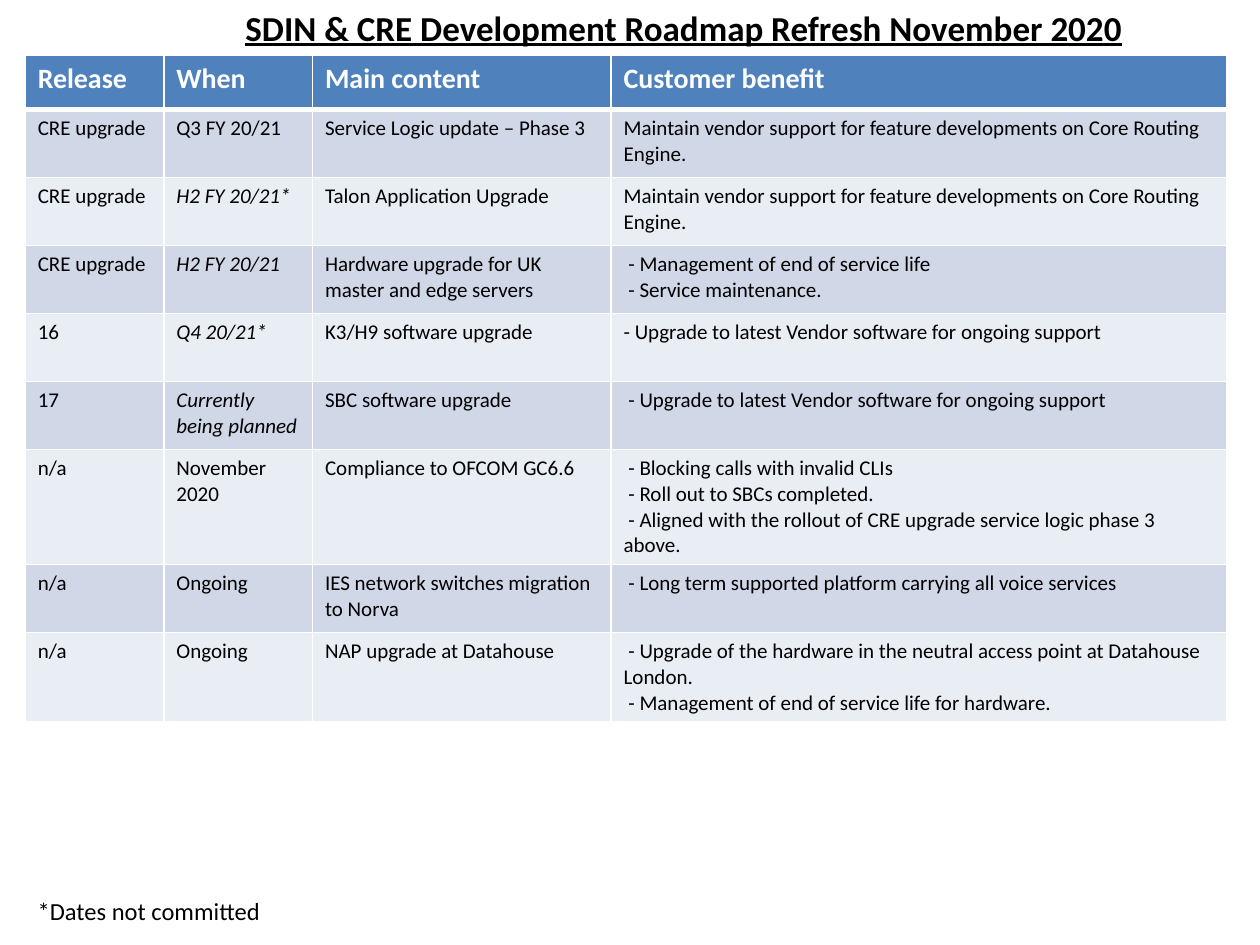
from dataclasses import dataclass
from lxml.etree import SubElement
from pptx import Presentation
from pptx.dml.color import RGBColor
from pptx.enum.text import MSO_AUTO_SIZE
from pptx.oxml.ns import qn
from pptx.util import Inches, Pt

TITLE = "SDIN & CRE Development Roadmap Refresh November 2020"
NOTE = "*Dates not committed"
HEADS = ("Release", "When", "Main content", "Customer benefit")
ROUTING = "Maintain vendor support for feature developments on Core Routing Engine."
LATEST = "- Upgrade to latest Vendor software for ongoing support"
ROWS = [
    ("CRE upgrade", "Q3 FY 20/21", "Service Logic update – Phase 3", ROUTING),
    ("CRE upgrade", "H2 FY 20/21*", "Talon Application Upgrade", ROUTING),
    ("CRE upgrade", "H2 FY 20/21", "Hardware upgrade for UK master and edge servers",
     " - Management of end of service life\n - Service maintenance."),
    ("16", "Q4 20/21*", "K3/H9 software upgrade", LATEST),
    ("17", "Currently being planned", "SBC software upgrade", " " + LATEST),
    ("n/a", "November 2020", "Compliance to OFCOM GC6.6",
     " - Blocking calls with invalid CLIs\n - Roll out to SBCs completed.\n"
     " - Aligned with the rollout of CRE upgrade service logic phase 3 above."),
    ("n/a", "Ongoing", "IES network switches migration to Norva",
     " - Long term supported platform carrying all voice services"),
    ("n/a", "Ongoing", "NAP upgrade at Datahouse",
     " - Upgrade of the hardware in the neutral access point at Datahouse London.\n"
     " - Management of end of service life for hardware."),
]
SLANTED = {2, 3, 4, 5}
WIDTHS = (1.1, 1.18, 2.37, 4.89)
LEFT, TOP = 0.2, 0.44
HEAD_ROW, BODY_ROW = 0.43, 0.54


@dataclass(frozen=True)
class Theme:
    font: str = "Calibri"
    ink: str = "000000"
    white: str = "FFFFFF"
    head: str = "4F81BD"
    bands: tuple = ("E9EDF4", "D0D8E8")
    title: int = 20
    label: int = 16
    note: int = 14
    body: int = 12


THEME = Theme()


def write(frame, text, size=THEME.body, color=THEME.ink, **style):
    frame.word_wrap = True
    for n, line in enumerate(text.split("\n")):
        para = frame.add_paragraph() if n else frame.paragraphs[0]
        run = para.add_run()
        run.text = line
        font = run.font
        font.name, font.size = THEME.font, Pt(size)
        font.color.rgb = RGBColor.from_string(color)
        for key, value in style.items():
            setattr(font, key, value)


def add_text(slide, box, text, **style):
    frame = slide.shapes.add_textbox(*map(Inches, box)).text_frame
    write(frame, text, **style)
    frame.auto_size = MSO_AUTO_SIZE.SHAPE_TO_FIT_TEXT


def paint(cell, color, base):
    props = cell._tc.get_or_add_tcPr()
    for side, width in (("L", 1), ("R", 1), ("T", 1), ("B", base)):
        line = SubElement(props, qn("a:ln" + side), w=str(Pt(width)))
        fill = SubElement(line, qn("a:solidFill"))
        SubElement(fill, qn("a:srgbClr"), val=THEME.white)
    cell.fill.solid()
    cell.fill.fore_color.rgb = RGBColor.from_string(color)


def add_grid(slide):
    data = [HEADS, *ROWS]
    high = HEAD_ROW + BODY_ROW * len(ROWS)
    box = map(Inches, (LEFT, TOP, sum(WIDTHS), high))
    table = slide.shapes.add_table(len(data), len(HEADS), *box).table
    for col, width in zip(table.columns, WIDTHS):
        col.width = Inches(width)
    for r, row in enumerate(data):
        table.rows[r].height = Inches(BODY_ROW if r else HEAD_ROW)
        for c, text in enumerate(row):
            cell = table.cell(r, c)
            if r:
                paint(cell, THEME.bands[r % 2], 1)
                write(cell.text_frame, text, italic=c == 1 and r in SLANTED)
            else:
                paint(cell, THEME.head, 3)
                write(cell.text_frame, text, size=THEME.label,
                      color=THEME.white, bold=True)


def main():
    deck = Presentation()
    deck.slide_width, deck.slide_height = Inches(10), Inches(7.5)
    slide = deck.slides.add_slide(deck.slide_layouts[6])
    add_grid(slide)
    add_text(slide, (1.85, 0, 7.4, TOP), TITLE, size=THEME.title,
             bold=True, underline=True)
    add_text(slide, (LEFT, 7.06, 5.75, 0.34), NOTE, size=THEME.note)
    deck.save("out.pptx")


if __name__ == "__main__":
    main()
